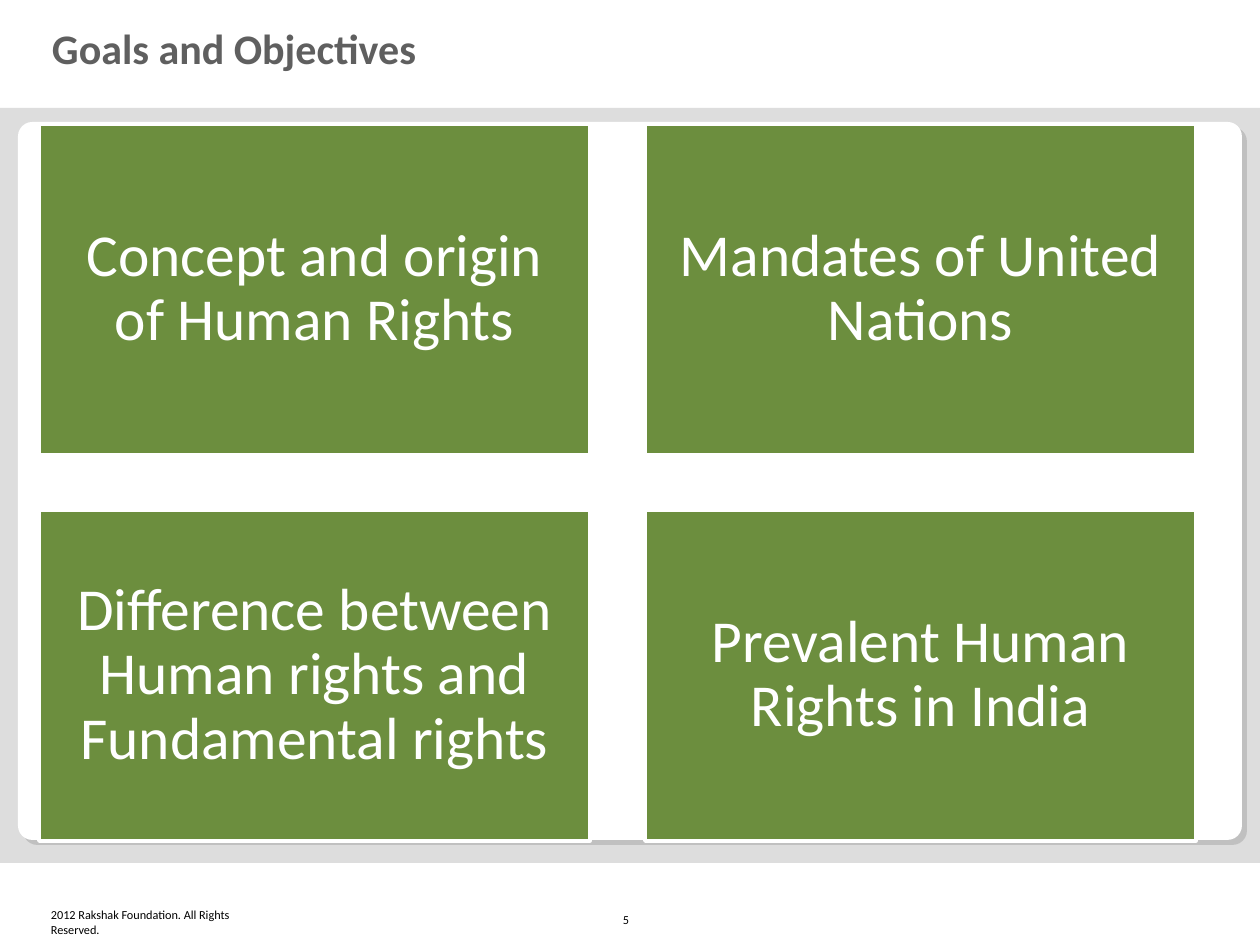
"""Build the Goals and Objectives slide with its four topic cards."""
from pptx import Presentation
from pptx.dml.color import RGBColor
from pptx.enum.shapes import MSO_SHAPE
from pptx.enum.text import MSO_ANCHOR, MSO_AUTO_SIZE, PP_ALIGN
from pptx.util import Emu, Pt

COLORS = {
    "band": "DDDDDD",
    "shade": "C0C0C0",
    "white": "FFFFFF",
    "title": "5F5F5F",
    "small": "000000",
    "card": "6C8E3E",
}


def px(*values):
    return [Emu(v * 914400 // 126) for v in values]


def add_text(tf, text, size, color, margins, anchor, align=PP_ALIGN.LEFT, spacing=1.0, bold=False):
    tf.word_wrap = True
    tf.auto_size = MSO_AUTO_SIZE.NONE
    tf.vertical_anchor = anchor
    tf.margin_left, tf.margin_top, tf.margin_right, tf.margin_bottom = px(*margins)
    p = tf.paragraphs[0]
    p.alignment = align
    p.line_spacing = spacing
    p.space_before = Pt(0)
    r = p.add_run()
    r.text = text
    r.font.name = "Calibri"
    r.font.size = Pt(size)
    r.font.bold = bold
    r.font.color.rgb = RGBColor.from_string(COLORS[color])


prs = Presentation()
prs.slide_width, prs.slide_height = px(1260, 945)
s = prs.slides.add_slide(prs.slide_layouts[5])

panels = [
    (MSO_SHAPE.RECTANGLE, (0, 108, 1260, 755), "band"),
    (MSO_SHAPE.ROUNDED_RECTANGLE, (23, 127, 1224, 718), "shade"),
    (MSO_SHAPE.ROUNDED_RECTANGLE, (18, 122, 1224, 718), "white"),
]
for kind, box, color in panels:
    sp = s.shapes.add_shape(kind, *px(*box))
    sp.shadow.inherit = False
    sp.fill.solid()
    sp.fill.fore_color.rgb = RGBColor.from_string(COLORS[color])
    sp.line.fill.background()
    if kind == MSO_SHAPE.ROUNDED_RECTANGLE:
        sp.adjustments[0] = 0.02

title = s.shapes.title
title.left, title.top, title.width, title.height = px(39, 24, 1000, 55)
add_text(title.text_frame, "Goals and Objectives", 24, "title", (13, 6, 13, 6),
         MSO_ANCHOR.MIDDLE, spacing=0.85, bold=True)

small_texts = [
    ("2012 Rakshak Foundation. All Rights Reserved.", (51, 907, 208, 30), (0, 0, 0, 0)),
    ("5", (610, 890, 40, 43), (13, 6, 13, 6)),
]
for text, box, margins in small_texts:
    tf = s.shapes.add_textbox(*px(*box)).text_frame
    add_text(tf, text, 7, "small", margins, MSO_ANCHOR.BOTTOM)

topics = [
    "Concept and origin of Human Rights",
    "Mandates of United Nations",
    "Difference between Human rights and Fundamental rights",
    "Prevalent Human Rights in India",
]
card_w, card_h, gap = 551, 331, 55
for i, topic in enumerate(topics):
    row, col = divmod(i, 2)
    x = 39 + col * (card_w + gap)
    y = 124 + row * (card_h + gap)
    sp = s.shapes.add_shape(MSO_SHAPE.RECTANGLE, *px(x, y, card_w, card_h))
    sp.shadow.inherit = False
    sp.fill.solid()
    sp.fill.fore_color.rgb = RGBColor.from_string(COLORS["card"])
    sp.line.color.rgb = RGBColor.from_string(COLORS["white"])
    sp.line.width = Pt(2)
    add_text(sp.text_frame, topic, 34, "white", (18, 18, 18, 18),
             MSO_ANCHOR.MIDDLE, PP_ALIGN.CENTER, 0.9)

prs.save("out.pptx")
